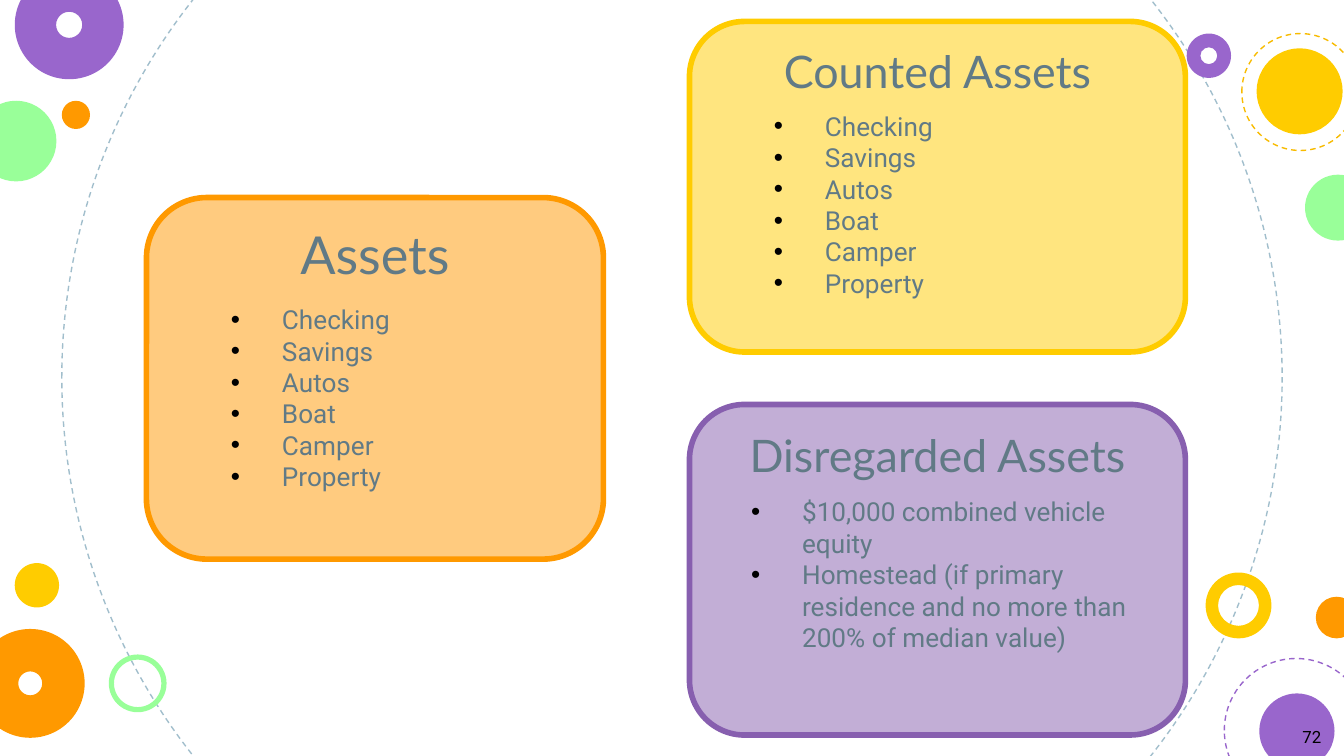
from lxml import etree
from pptx import Presentation, util as u
from pptx.dml.color import RGBColor
from pptx.enum import dml, shapes, text
from pptx.oxml.ns import qn

PX = 9144  # 100 px to the inch
HUES = {
    "orange": "FF9900", "yellow": "FFCC00", "gold": "F8BB00", "green": "99FF99",
    "purple": "9966CC", "plum": "875FAF", "mist": "A1BECC", "slate": "617A86",
    "black": "000000",
}
KIND = shapes.MSO_SHAPE

deck = Presentation()
deck.slide_width, deck.slide_height = 1000 * PX, u.Inches(5.625)
slide = deck.slides.add_slide(deck.slide_layouts[6])


def add_form(kind, box, fill=None, line=None, width=0.75):
    form = slide.shapes.add_shape(kind, *[n * PX for n in box])
    form.shadow.inherit = False
    if fill:
        form.fill.solid()
        form.fill.fore_color.rgb = RGBColor.from_string(HUES[fill])
    else:
        form.fill.background()
    if line:
        form.line.color.rgb = RGBColor.from_string(HUES[line])
        form.line.width = u.Pt(width)
    else:
        form.line.fill.background()
    return form


def add_run(para, words, size, face, hue):
    run = para.add_run()
    run.text = words
    run.font.size = u.Pt(size)
    run.font.name = face
    run.font.color.rgb = RGBColor.from_string(HUES[hue])


# Circles: left, top, size, fill, dashed line, ring thickness
circles = [
    (46, -173, 908, None, "mist", None),
    (-18, 75, 60, "green", None, None),
    (897, 426, 49, "yellow", None, 0.19),
    (11, -22, 81, "purple", None, 0.38),
    (46, 75, 21, "orange", None, None),
    (911, 490, 107, None, "purple", None),
    (81, 487, 43, "green", None, 0.09),
    (979, 444, 31, "orange", None, None),
    (-18, 468, 81, "orange", None, 0.39),
    (937, 516, 56, "purple", None, None),
    (883, 25, 33, "purple", None, 0.31),
    (935, 36, 64, "yellow", None, None),
    (971, 130, 49, "green", None, None),
    (924, 25, 87, None, "gold", None),
    (11, 419, 33, "yellow", None, None),
]
for left, top, size, fill, line, ring in circles:
    kind = KIND.DONUT if ring else KIND.OVAL
    disc = add_form(kind, (left, top, size, size), fill, line)
    if ring:
        disc.adjustments[0] = ring
    if line:
        disc.line.dash_style = dml.MSO_LINE.DASH

# Cards
cards = [
    ("Assets", 28, (109, 147, 340, 269), "orange"),
    ("Counted Assets", 24, (513, 16, 369, 246), "yellow"),
    ("Disregarded Assets", 24, (513, 301, 369, 246), "plum"),
]
for title, size, box, hue in cards:
    card = add_form(KIND.ROUNDED_RECTANGLE, box, hue, hue, 3)
    tint = card.fill._xPr.find(qn("a:solidFill"))[0]
    etree.SubElement(tint, qn("a:alpha"), val="50000")
    frame = card.text_frame
    frame.vertical_anchor = text.MSO_ANCHOR.TOP
    para = frame.paragraphs[0]
    para.alignment = text.PP_ALIGN.CENTER
    add_run(para, title, size, "Lato", "slate")

# Lists
goods = ["Checking", "Savings", "Autos", "Boat", "Camper", "Property"]
exempt = [
    "$10,000 combined vehicle equity",
    "Homestead (if primary residence and no more than 200% of median value)",
]
lists = [
    ((162, 221, 333, 151), goods),
    ((549, 364, 333, 128), exempt),
    ((566, 77, 333, 151), goods),
]
for box, items in lists:
    frame = slide.shapes.add_textbox(*[n * PX for n in box]).text_frame
    frame.word_wrap = True
    frame.auto_size = text.MSO_AUTO_SIZE.SHAPE_TO_FIT_TEXT
    for i, item in enumerate(items):
        para = frame.add_paragraph() if i else frame.paragraphs[0]
        props = para._p.get_or_add_pPr()
        props.set("marL", str(38 * PX))
        props.set("indent", str(-38 * PX))
        tone = etree.SubElement(props, qn("a:buClr"))
        etree.SubElement(tone, qn("a:srgbClr"), val=HUES["black"])
        etree.SubElement(props, qn("a:buFont"), typeface="Arial")
        etree.SubElement(props, qn("a:buChar"), char="•")
        add_run(para, item, 14, "Roboto", "slate")

# Page number
frame = slide.shapes.add_textbox(947 * PX, 533 * PX, 46 * PX, 30 * PX).text_frame
frame.word_wrap = True
frame.vertical_anchor = text.MSO_ANCHOR.MIDDLE
para = frame.paragraphs[0]
para.alignment = text.PP_ALIGN.RIGHT
add_run(para, "72", 9, "Roboto", "black")

deck.save("out.pptx")
